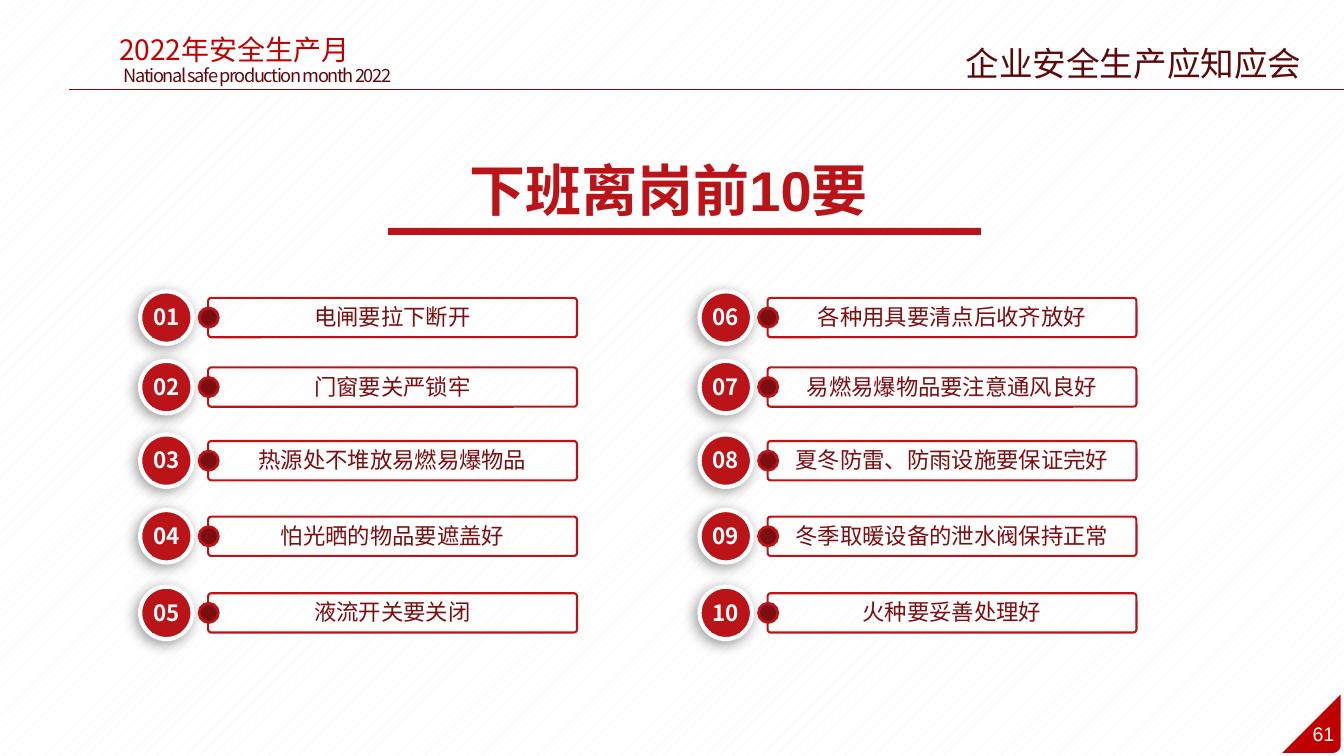
import math
from dataclasses import dataclass

from lxml import etree
from pptx import Presentation
from pptx import util as u
from pptx.dml.color import RGBColor
from pptx.enum import dml, shapes, text
from pptx.oxml import ns

SHAPE = shapes.MSO_SHAPE
CELL = u.Inches(0.1)  # one grid column or row
COLS, ROWS = 133.33, 75


@dataclass(frozen=True)
class Theme:
    red: str = "BA1318"
    bright: str = "C00000"
    dark: str = "7C0D10"
    deep: str = "5D090C"
    white: str = "FFFFFF"
    number: str = "FCFCFC"
    hatch: str = "F2F2F2"
    latin: str = "Arial"
    cjk: str = "Noto Sans CJK SC"
    title: int = 40
    heading: int = 24
    brand: int = 20
    body: int = 16
    page: int = 14
    caption: int = 13


def cells(*values):
    return [round(v * CELL) for v in values]


def write(sp, words, size, color, font, bold=False, align="CENTER", anchor="TOP",
          wrap=True, grow=False, inset=(1, 0.5), line=None, track=None):
    """Put one formatted line of text into a shape."""
    tf = sp.text_frame
    tf.word_wrap = wrap
    tf.vertical_anchor = getattr(text.MSO_ANCHOR, anchor)
    if grow:
        tf.auto_size = text.MSO_AUTO_SIZE.SHAPE_TO_FIT_TEXT
    tf.margin_left, tf.margin_top = tf.margin_right, tf.margin_bottom = cells(*inset)
    p = tf.paragraphs[0]
    p.alignment = getattr(text.PP_ALIGN, align)
    if line:
        p.line_spacing = u.Pt(line)
    r = p.add_run()
    r.text = words
    r.font.size, r.font.bold, r.font.name = u.Pt(size), bold, font
    r.font.color.rgb = RGBColor.from_string(color)
    rpr = r.font._element
    etree.SubElement(rpr, ns.qn("a:ea"), typeface=Theme.cjk)
    if track:
        rpr.set("spc", str(track * 100))


class Deck:
    def __init__(self, theme):
        self.theme = theme
        self.prs = Presentation()
        self.prs.slide_width, self.prs.slide_height = cells(COLS, ROWS)
        self.s = self.prs.slides.add_slide(self.prs.slide_layouts[6])

    def background(self):
        fill = self.s.background.fill
        fill.patterned()
        fill.pattern = dml.MSO_PATTERN.PERCENT_5
        fill.fore_color.rgb = RGBColor.from_string(self.theme.hatch)
        fill.back_color.rgb = RGBColor.from_string(self.theme.white)

    def paint(self, sp, fill=None, line=None, width=1):
        sp.shadow.inherit = False
        if fill:
            sp.fill.solid()
            sp.fill.fore_color.rgb = RGBColor.from_string(fill)
        else:
            sp.fill.background()
        if line:
            sp.line.color.rgb = RGBColor.from_string(line)
            sp.line.width = u.Pt(width)
        else:
            sp.line.fill.background()
        return sp

    def shape(self, kind, x, y, w, h, **style):
        return self.paint(self.s.shapes.add_shape(kind, *cells(x, y, w, h)), **style)

    def outline(self, points, **style):
        pts = [cells(*pt) for pt in points]
        b = self.s.shapes.build_freeform(*pts[0])
        b.add_line_segments(pts[1:], close=True)
        return self.paint(b.convert_to_shape(), **style)

    def rule(self, x1, y1, x2, y2, color, width):
        c = self.s.shapes.add_connector(shapes.MSO_CONNECTOR.STRAIGHT, *cells(x1, y1, x2, y2))
        c.line.color.rgb = RGBColor.from_string(color)
        c.line.width = u.Pt(width)
        etree.SubElement(c._element.spPr, ns.qn("a:effectLst"))

    def label(self, x, y, w, h, words, **fmt):
        write(self.s.shapes.add_textbox(*cells(x, y, w, h)), words, **fmt)

    def soft_shadow(self, sp):
        effects = sp._element.spPr.find(ns.qn("a:effectLst"))
        shadow = etree.SubElement(effects, ns.qn("a:outerShdw"), blurRad=str(u.Pt(10)),
                                  dist=str(u.Pt(3)), dir=str(135 * 60000),
                                  algn="tr", rotWithShape="0")
        black = etree.SubElement(shadow, ns.qn("a:srgbClr"), val="000000")
        etree.SubElement(black, ns.qn("a:alpha"), val="40000")

    def item(self, x, mid, number, words):
        """Numbered badge, framed sentence and pin, centred on row mid."""
        t = self.theme
        badge = self.shape(SHAPE.OVAL, x, mid - 2.6, 5.2, 5.2,
                           fill=t.red, line=t.white, width=3)
        self.soft_shadow(badge)
        plate = self.shape(SHAPE.RECTANGLE, x + 1.2, mid - 1.4, 2.8, 3.4, fill=t.red)
        write(plate, f"{number:02d}", t.body, t.number, t.cjk, bold=True,
              anchor="MIDDLE", inset=(0, 0), line=14)
        frame = self.shape(SHAPE.ROUNDED_RECTANGLE, x + 6.75, mid - 1.95, 36.6, 3.9,
                           line=t.red, width=1.5)
        frame.adjustments[0] = 0.08
        write(frame, words, t.body, t.dark, t.cjk, anchor="MIDDLE", wrap=False, line=18)
        self.shape(SHAPE.FLOWCHART_CONNECTOR, x + 5.85, mid - 0.95, 1.9, 1.9,
                   fill=t.dark, line=t.red, width=2)


COLUMN_LEFTS = (13.9, 69.4)
ROW_MIDS = (31.5, 38.4, 45.7, 53.2, 60.8)
RULES = (
    ("电闸要拉下断开", "门窗要关严锁牢", "热源处不堆放易燃易爆物品",
     "怕光晒的物品要遮盖好", "液流开关要关闭"),
    ("各种用具要清点后收齐放好", "易燃易爆物品要注意通风良好",
     "夏冬防雷、防雨设施要保证完好", "冬季取暖设备的泄水阀保持正常",
     "火种要妥善处理好"),
)


def main():
    t = Theme()
    deck = Deck(t)
    deck.background()

    # Header
    deck.rule(6.8, 8.9, COLS, 8.9, t.dark, 0.75)
    deck.label(6.1, 2.7, 34.3, 4.4, "2022年安全生产月",
               size=t.brand, color=t.bright, font=t.cjk, grow=True)
    deck.label(10.8, 5.9, 29.5, 3.2, "National safe production month 2022",
               size=t.caption, color=t.deep, font=t.cjk, wrap=False, grow=True, track=-1)
    deck.label(72.5, 3.8, 79.9, 5, "企业安全生产应知应会",
               size=t.heading, color=t.deep, font=t.cjk, grow=True)

    # Page corner with one rounded vertex
    arc = [(132.2 + 0.8 * math.cos(a), 73.9 + 0.8 * math.sin(a))
           for a in (math.pi / 16 * k for k in range(9))]
    deck.outline([(133, 68.9), *arc, (127.2, 74.7)], fill=t.bright)
    deck.label(129.1, 71.1, 4.4, 3.4, "61", size=t.page, color=t.white,
               font=t.latin, wrap=False, grow=True)

    # Title
    deck.label(45.3, 15.6, 61, 6.3, "下班离岗前10要", size=t.title, color=t.red,
               font=t.latin, bold=True, align="LEFT", anchor="MIDDLE", inset=(1.3, 0.7))
    deck.shape(SHAPE.RECTANGLE, 38.5, 22.6, 58.8, 0.7, fill=t.red)

    # Ten rules in two columns
    for col, (x, column) in enumerate(zip(COLUMN_LEFTS, RULES)):
        for row, (mid, words) in enumerate(zip(ROW_MIDS, column)):
            deck.item(x, mid, col * len(ROW_MIDS) + row + 1, words)

    deck.prs.save("out.pptx")


if __name__ == "__main__":
    main()
